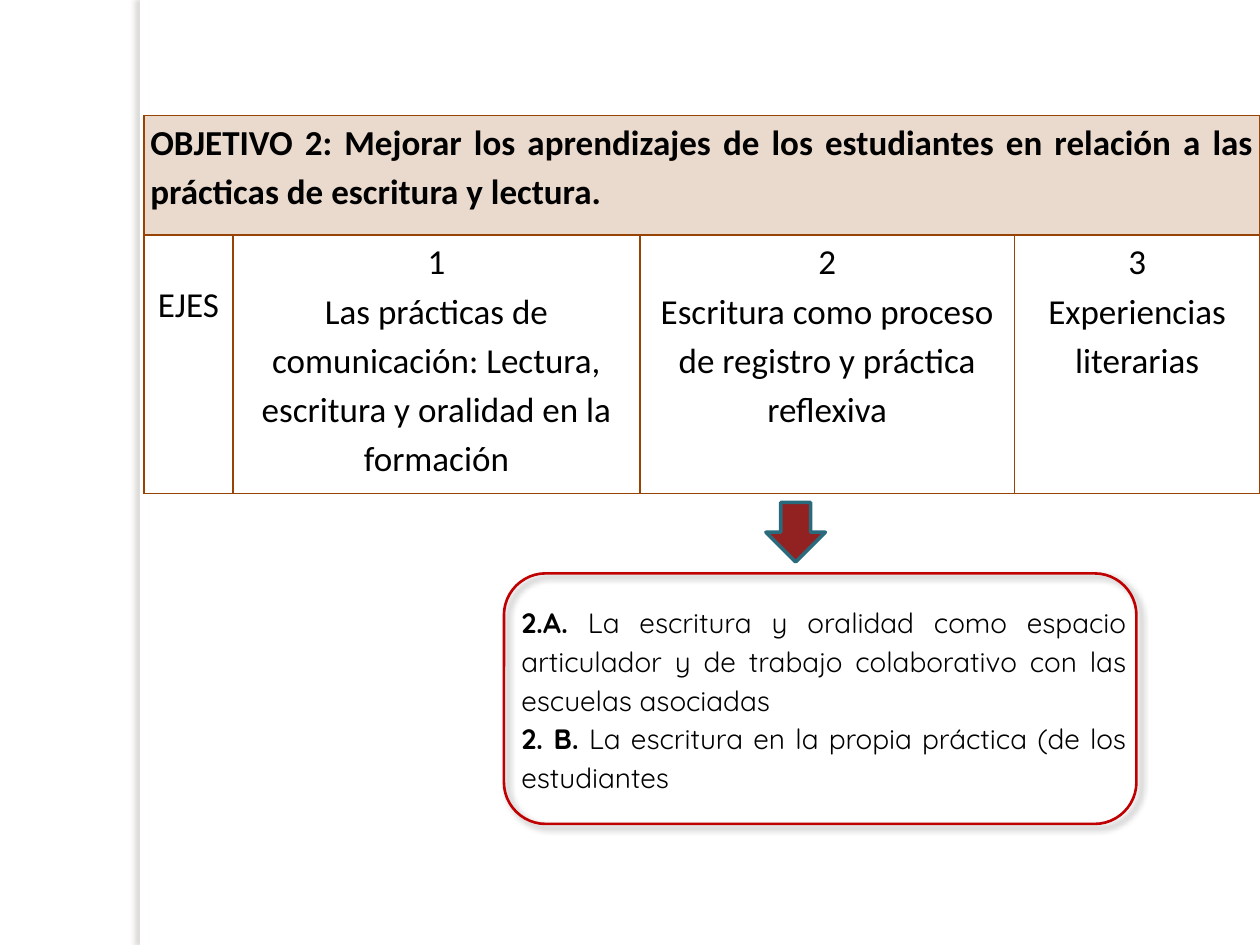
from typing import NamedTuple

from lxml import etree
from pptx import Presentation
from pptx import util as u
from pptx.dml.color import RGBColor
from pptx.enum import shapes, text
from pptx.oxml import ns

COLORS = {
    "white": "FFFFFF",
    "black": "000000",
    "brown": "964305",
    "beige": "EAD9CD",
    "red": "C00000",
    "dark_red": "922222",
    "teal": "296B7C",
    "edge_shadow": "736F63",
}
ALIGN = text.PP_ALIGN


class Shadow(NamedTuple):
    color: str
    opacity: int
    blur: float
    distance: float
    angle: int


class Box(NamedTuple):
    preset: shapes.MSO_SHAPE
    left: float
    top: float
    width: float
    height: float
    fill: str | None = None
    line: str | None = None
    weight: float = 1
    shadow: Shadow | None = None


class Axis(NamedTuple):
    lines: list[str]
    width: float
    top_margin: float = 0


EDGE = Box(shapes.MSO_SHAPE.RECTANGLE, 2.82, 0, 0.2, 19.05, fill="white",
           shadow=Shadow("edge_shadow", 25, 3, 3, 180))
FRAME = Box(shapes.MSO_SHAPE.ROUNDED_RECTANGLE, 10.16, 11.56, 12.75, 5.05,
            line="red", weight=1.5, shadow=Shadow("black", 40, 4, 3, 45))
ARROW = Box(shapes.MSO_SHAPE.DOWN_ARROW, 15.44, 10.13, 1.2, 1.2,
            fill="dark_red", line="teal", weight=2)

OBJECTIVE = ("OBJETIVO 2: Mejorar los aprendizajes de los estudiantes en relación "
             "a las prácticas de escritura y lectura.")
AXES = [
    Axis(["EJES"], 1.8, top_margin=0.86),
    Axis(["1", "Las prácticas de comunicación: Lectura, escritura y oralidad "
               "en la formación"], 8.2),
    Axis(["2", "Escritura como proceso de registro y práctica reflexiva"], 7.55),
    Axis(["3", "Experiencias literarias"], 4.95),
]
TOPICS = [
    ("2.A.", " La escritura y oralidad como espacio articulador y de trabajo "
             "colaborativo con las escuelas asociadas"),
    ("2. B.", " La escritura en la propia práctica (de los estudiantes"),
]


def rgb(name: str) -> RGBColor:
    return RGBColor.from_string(COLORS[name])


def add_text(paragraph, content: str, *, size: float, font: str,
             align: text.PP_ALIGN, bold: bool = False) -> None:
    paragraph.alignment = align
    paragraph.line_spacing = 1.15
    run = paragraph.add_run()
    run.text = content
    run.font.size = u.Pt(size)
    run.font.name = font
    run.font.bold = bold
    run.font.color.rgb = rgb("black")


def next_paragraph(frame, index: int):
    return frame.add_paragraph() if index else frame.paragraphs[0]


def add_color(parent, name: str):
    return etree.SubElement(parent, ns.qn("a:srgbClr"), val=COLORS[name])


def add_shadow(shape, shadow: Shadow) -> None:
    effects = shape._element.spPr.find(ns.qn("a:effectLst"))
    outer = etree.SubElement(
        effects, ns.qn("a:outerShdw"), blurRad=str(u.Pt(shadow.blur)),
        dist=str(u.Pt(shadow.distance)), dir=str(shadow.angle * 60000),
        algn="ctr", rotWithShape="0")
    color = add_color(outer, shadow.color)
    etree.SubElement(color, ns.qn("a:alpha"), val=str(shadow.opacity * 1000))


def draw_box(slide, box: Box) -> None:
    shape = slide.shapes.add_shape(box.preset, u.Cm(box.left), u.Cm(box.top),
                                   u.Cm(box.width), u.Cm(box.height))
    shape.shadow.inherit = False
    if box.fill:
        shape.fill.solid()
        shape.fill.fore_color.rgb = rgb(box.fill)
    else:
        shape.fill.background()
    if box.line:
        shape.line.color.rgb = rgb(box.line)
        shape.line.width = u.Pt(box.weight)
    else:
        shape.line.fill.background()
    if box.shadow:
        add_shadow(shape, box.shadow)


def format_cell(cell, fill: str | None = None, top_margin: float = 0) -> None:
    cell.margin_left = cell.margin_right = u.Cm(0.13)
    cell.margin_top, cell.margin_bottom = u.Cm(top_margin), 0
    properties = cell._tc.get_or_add_tcPr()
    for side in ("L", "R", "T", "B"):
        border = etree.SubElement(properties, ns.qn(f"a:ln{side}"), w=str(u.Pt(1)))
        add_color(etree.SubElement(border, ns.qn("a:solidFill")), "brown")
    if fill:
        cell.fill.solid()
        cell.fill.fore_color.rgb = rgb(fill)
    else:
        cell.fill.background()


def draw_axes_table(slide) -> None:
    heights = (2.41, 5.21)
    width = sum(axis.width for axis in AXES)
    table = slide.shapes.add_table(2, len(AXES), u.Cm(2.9), u.Cm(2.33),
                                   u.Cm(width), u.Cm(sum(heights))).table
    table.first_row = table.horz_banding = False
    for row, height in zip(table.rows, heights):
        row.height = u.Cm(height)
    for index, axis in enumerate(AXES):
        table.columns[index].width = u.Cm(axis.width)
        format_cell(table.cell(0, index), fill="beige")
        cell = table.cell(1, index)
        format_cell(cell, top_margin=axis.top_margin)
        for number, line in enumerate(axis.lines):
            add_text(next_paragraph(cell.text_frame, number), line,
                     size=20, font="Calibri", align=ALIGN.CENTER)
    heading = table.cell(0, 0)
    heading.merge(table.cell(0, len(AXES) - 1))
    add_text(heading.text_frame.paragraphs[0], OBJECTIVE,
             size=20, font="Calibri", align=ALIGN.JUSTIFY, bold=True)


def draw_topics(slide) -> None:
    frame = slide.shapes.add_textbox(u.Cm(10.26), u.Cm(11.99),
                                     u.Cm(12.7), u.Cm(4.19)).text_frame
    frame.word_wrap = True
    for index, topic in enumerate(TOPICS):
        paragraph = next_paragraph(frame, index)
        for content, bold in zip(topic, (True, False)):
            add_text(paragraph, content, size=16, font="Quicksand",
                     align=ALIGN.JUSTIFY, bold=bold)


def main() -> None:
    presentation = Presentation()
    presentation.slide_width, presentation.slide_height = u.Cm(25.4), u.Cm(19.05)
    slide = presentation.slides.add_slide(presentation.slide_layouts[6])
    draw_box(slide, EDGE)
    draw_axes_table(slide)
    draw_topics(slide)
    draw_box(slide, FRAME)
    draw_box(slide, ARROW)
    presentation.save("out.pptx")


if __name__ == "__main__":
    main()
